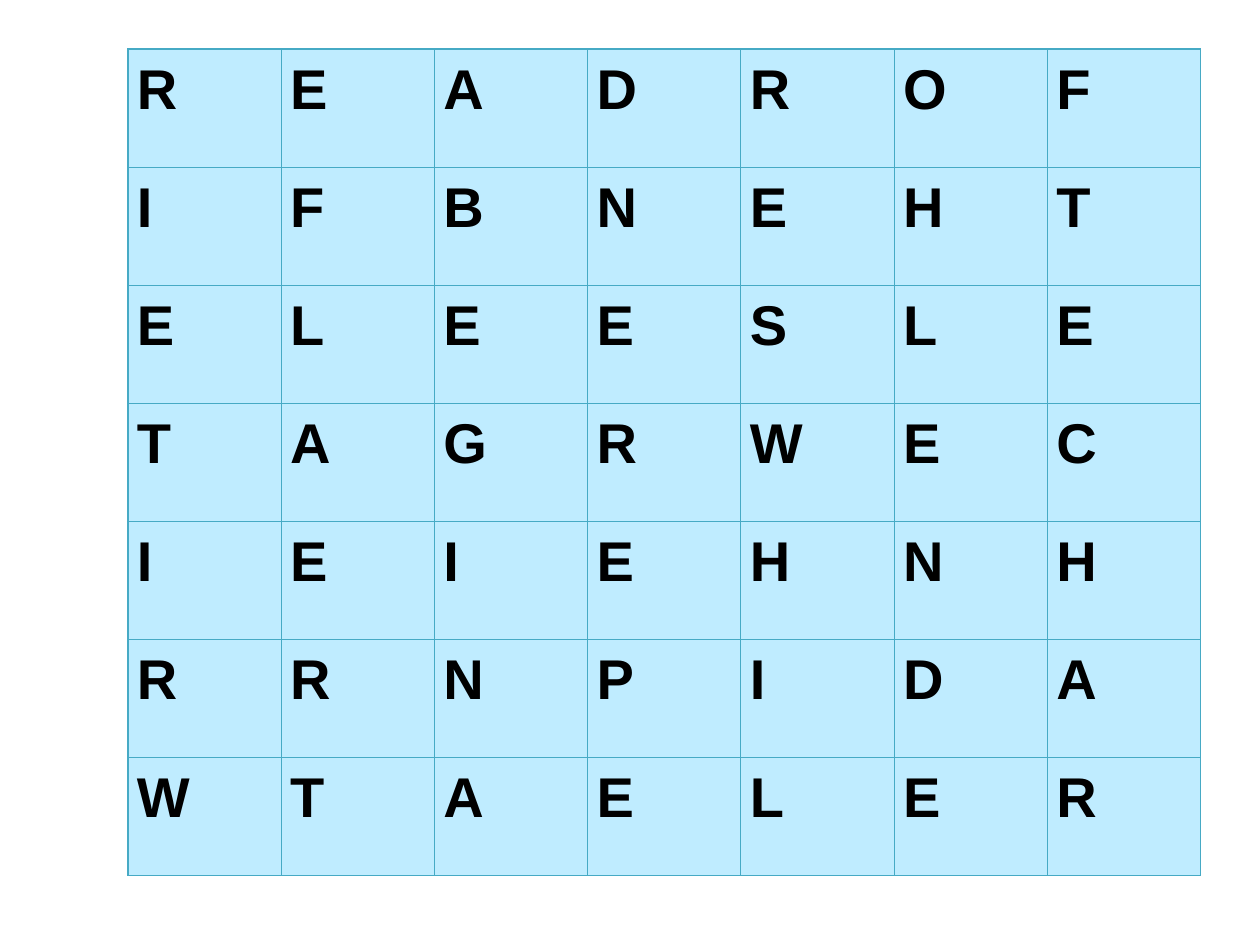
import pptx
import pptx.dml.color
import pptx.enum.text
import pptx.oxml
import pptx.oxml.ns
import pptx.util

EMU_PER_PX = 914400 // 126
LETTER_ROWS = ["READROF", "IFBNEHT", "ELEESLE", "TAGRWEC", "IEIEHNH", "RRNPIDA", "WTAEler".upper()]
CELL_FILL = "BFECFF"
GRID_LINE = "46AAC5"
LETTER_COLOUR = "000000"


def px(length):
    return pptx.util.Emu(length * EMU_PER_PX)


def colour(hex_value):
    return pptx.dml.color.RGBColor.from_string(hex_value)


def add_borders(cell):
    properties = cell._tc.get_or_add_tcPr()
    for position, side in enumerate(("lnL", "lnR", "lnT", "lnB")):
        border = pptx.oxml.parse_xml(
            f'<a:{side} {pptx.oxml.ns.nsdecls("a")} w="{pptx.util.Pt(0.75)}">'
            f'<a:solidFill><a:srgbClr val="{GRID_LINE}"/></a:solidFill></a:{side}>'
        )
        properties.insert(position, border)


def fill_cell(cell, letter):
    cell.fill.solid()
    cell.fill.fore_color.rgb = colour(CELL_FILL)
    cell.margin_left = cell.margin_right = px(9)
    cell.margin_top = cell.margin_bottom = 0
    add_borders(cell)
    cell.text_frame.text = letter
    paragraph = cell.text_frame.paragraphs[0]
    paragraph.alignment = pptx.enum.text.PP_ALIGN.JUSTIFY
    paragraph.line_spacing = 1.15
    paragraph.space_after = pptx.util.Pt(10)
    font = paragraph.runs[0].font
    font.name = "Arial"
    font.size = pptx.util.Pt(32)
    font.bold = True
    font.color.rgb = colour(LETTER_COLOUR)


def add_letter_grid(slide, letter_rows, left, top, width, height):
    grid = slide.shapes.add_table(
        len(letter_rows), len(letter_rows[0]), px(left), px(top), px(width), px(height)
    ).table
    grid.first_row = False
    grid.horz_banding = False
    for row, letters in enumerate(letter_rows):
        for column, letter in enumerate(letters):
            fill_cell(grid.cell(row, column), letter)


def main():
    presentation = pptx.Presentation()
    presentation.slide_width = px(1260)
    presentation.slide_height = px(945)
    slide = presentation.slides.add_slide(presentation.slide_layouts[6])
    add_letter_grid(slide, LETTER_ROWS, 128, 49, 1073, 827)
    presentation.save("out.pptx")


if __name__ == "__main__":
    main()
